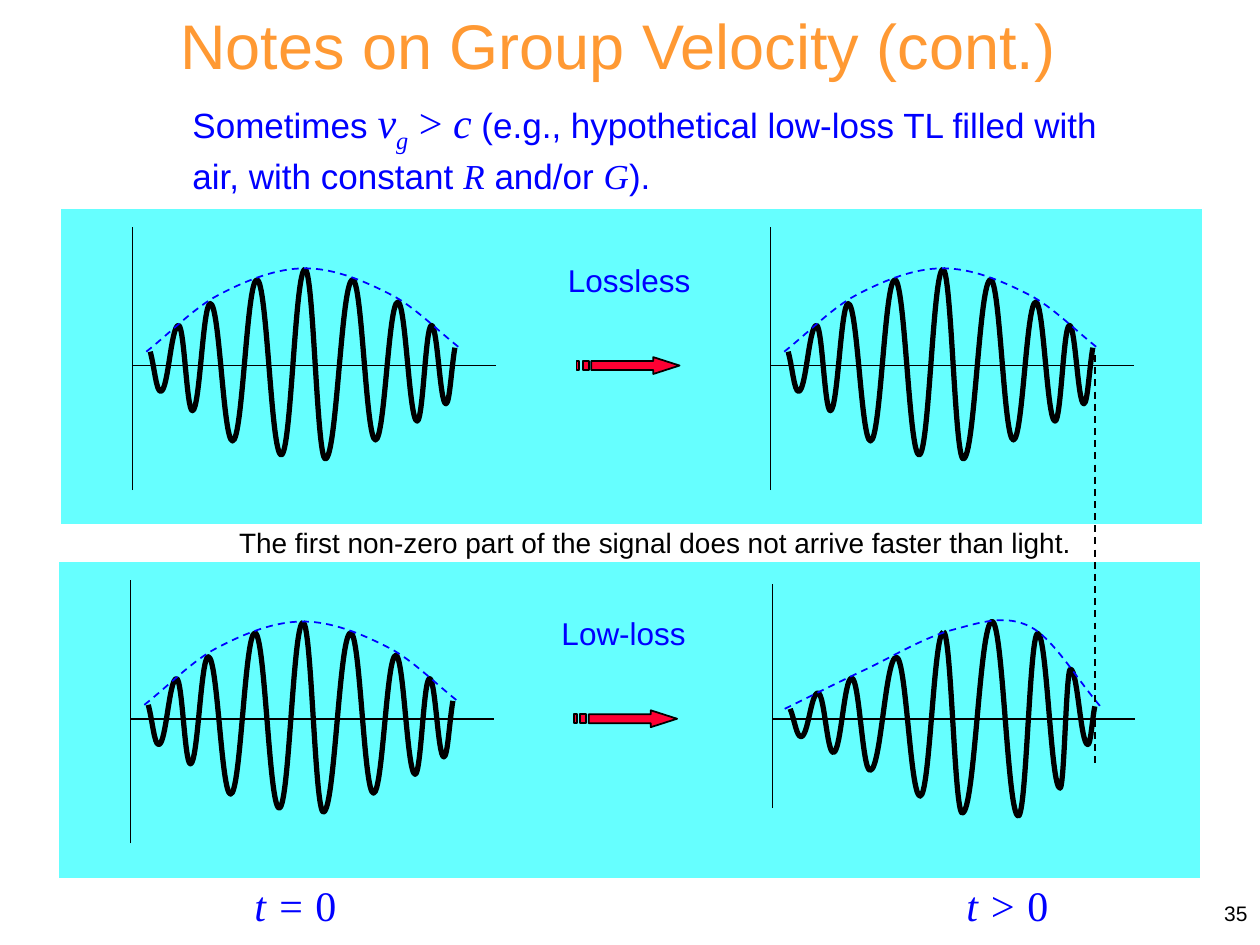
"""Build the slide comparing lossless and low-loss pulse propagation."""
import pptx
import pptx.dml.color
import pptx.enum.dml
import pptx.enum.shapes
import pptx.enum.text
import pptx.oxml.ns
import pptx.util
import lxml.etree

Cm = pptx.util.Cm
COLORS = {"title": "FF9933", "blue": "0000FF", "panel": "66FFFF",
          "white": "FFFFFF", "black": "000000", "arrow": "FF0033"}
SANS, SERIF = "Arial", "Times New Roman"
MATH = {"font": SERIF, "italic": True}

TITLE = "Notes on Group Velocity (cont.)"
STATEMENT = [
    ("Sometimes ", {}), ("v", {"size": 24, **MATH}), ("g", {"size": 24, "baseline": -25000, **MATH}),
    (" > ", {"size": 24, "font": SERIF}), ("c", {"size": 24, **MATH}),
    (" (e.g., hypothetical low-loss TL filled with air, with constant ", {}),
    ("R", MATH), (" and/or ", {}), ("G", MATH), (").", {}),
]
REMARK = "The first non-zero part of the signal does not arrive faster than light."
TIMES = [("t = ", 4.88), ("t > ", 19.23)]

EVEN_PULSE = {
    "axis_top": -2.79, "axis_bottom": 2.51,
    "turning_points": [
        (0.36, -0.28), (0.57, 0.52), (0.93, -0.81), (1.21, 0.91), (1.57, -1.25), (2.02, 1.52),
        (2.51, -1.73), (3, 1.8), (3.48, -1.94), (3.89, 1.88), (4.44, -1.73), (4.9, 1.5),
        (5.35, -1.28), (5.74, 1.12), (6.03, -0.81), (6.32, 0.77), (6.5, -0.36)],
    "envelope": [(0.28, -0.28), (1.73, -1.42), (3.48, -1.96), (5.23, -1.42), (6.63, -0.33)],
}
SKEWED_PULSE = {
    "axis_top": -2.72, "axis_bottom": 1.8,
    "turning_points": [
        (0.36, -0.2), (0.58, 0.36), (0.92, -0.52), (1.23, 0.68), (1.6, -0.82), (1.97, 1.04),
        (2.5, -1.24), (2.98, 1.56), (3.45, -1.75), (3.83, 1.9), (4.43, -1.96), (4.96, 1.96),
        (5.35, -1.72), (5.8, 1.4), (6.01, -1), (6.36, 0.52), (6.5, -0.25)],
    "envelope": [(0.25, -0.2), (1.83, -0.97), (3.66, -1.8), (5.21, -1.85), (6.63, -0.23)],
}
PANELS = [
    {"left": 1.22, "top": 4.19, "label": "Lossless", "label_left": 9.98,
     "pulses": [(1.45, EVEN_PULSE), (14.31, EVEN_PULSE)]},
    {"left": 1.17, "top": 11.31, "label": "Low-loss", "label_left": 9.9,
     "pulses": [(1.46, EVEN_PULSE), (14.4, SKEWED_PULSE)]},
]
PANEL_WIDTH, PANEL_HEIGHT = 23.04, 6.4
AXIS_DROP, AXIS_LENGTH = 3.18, 7.32
LABEL_DROP, ARROW_LEFT = 0.95, 10.4
ARROW_BARS = [(0, 0.06), (0.13, 0.25)]
SHAFT_START, HEAD_START, ARROW_TIP = 0.3, 1.55, 2.08
SHAFT_HALF, HEAD_HALF = 0.09, 0.17
WAVE_REACH, ENVELOPE_REACH = 0.42, 0.33


def rgb(name):
    return pptx.dml.color.RGBColor.from_string(COLORS[name])


def add_text(slide, runs, box, size=20, font=SANS, color="black", align="LEFT", anchor="TOP", wrap=True):
    frame = slide.shapes.add_textbox(*map(Cm, box)).text_frame
    frame.word_wrap = wrap
    frame.vertical_anchor = pptx.enum.text.MSO_ANCHOR[anchor]
    paragraph = frame.paragraphs[0]
    paragraph.alignment = pptx.enum.text.PP_ALIGN[align]
    for text, style in [(runs, {})] if isinstance(runs, str) else runs:
        run = paragraph.add_run()
        run.text = text
        run.font.size = pptx.util.Pt(style.get("size", size))
        run.font.name = style.get("font", font)
        run.font.italic = style.get("italic", False)
        run.font.color.rgb = rgb(color)
        if "baseline" in style:
            run._r.get_or_add_rPr().set("baseline", str(style["baseline"]))


def set_line(shape, color="black", width=1, dashed=False):
    shape.line.color.rgb = rgb(color)
    shape.line.width = pptx.util.Pt(width)
    if dashed:
        shape.line.dash_style = pptx.enum.dml.MSO_LINE.DASH


def set_fill(shape, color):
    shape.shadow.inherit = False
    shape.fill.solid()
    shape.fill.fore_color.rgb = rgb(color)


def add_line(slide, start, end, dashed=False):
    connector = slide.shapes.add_connector(
        pptx.enum.shapes.MSO_CONNECTOR.STRAIGHT, *map(Cm, (*start, *end)))
    lxml.etree.SubElement(connector._element.spPr, pptx.oxml.ns.qn("a:effectLst"))
    set_line(connector, dashed=dashed)


def shift(points, origin):
    return [(Cm(origin[0] + x), Cm(origin[1] + y)) for x, y in points]


def chord_slope(start, end):
    return (end[1] - start[1]) / (end[0] - start[0])


def bezier_points(knots, reach, flat_turns=False):
    last = len(knots) - 1
    slopes = [0 if flat_turns and 0 < index < last
              else chord_slope(knots[max(index - 1, 0)], knots[min(index + 1, last)])
              for index in range(last + 1)]
    points = [knots[0]]
    for index in range(last):
        (x1, y1), (x2, y2) = knots[index:index + 2]
        step = reach * (x2 - x1)
        points += [(x1 + step, y1 + step * slopes[index]),
                   (x2 - step, y2 - step * slopes[index + 1]), (x2, y2)]
    return points


def add_curve(slide, points, origin, **line):
    start, *controls = shift(points, origin)
    builder = slide.shapes.build_freeform(*start)
    builder.add_line_segments(controls, close=False)
    shape = builder.convert_to_shape()
    segments = list(shape._element.iter(pptx.oxml.ns.qn("a:lnTo")))
    outline = segments[0].getparent()
    for index in range(0, len(segments), 3):
        curve = lxml.etree.SubElement(outline, pptx.oxml.ns.qn("a:cubicBezTo"))
        for segment in segments[index:index + 3]:
            curve.append(segment[0])
            outline.remove(segment)
    shape.shadow.inherit = False
    shape.fill.background()
    set_line(shape, **line)


def add_arrow(slide, origin):
    upper_edge = [(SHAFT_START, -SHAFT_HALF), (HEAD_START, -SHAFT_HALF), (HEAD_START, -HEAD_HALF)]
    lower_edge = [(x, -y) for x, y in reversed(upper_edge)]
    contours = [[*upper_edge, (ARROW_TIP, 0), *lower_edge]]
    for left, right in ARROW_BARS:
        contours.append([(left, -SHAFT_HALF), (right, -SHAFT_HALF), (right, SHAFT_HALF), (left, SHAFT_HALF)])
    contours = [shift(contour, origin) for contour in contours]
    builder = slide.shapes.build_freeform(*contours[0][0])
    for contour in contours:
        if contour is not contours[0]:
            builder.move_to(*contour[0])
        builder.add_line_segments(contour[1:])
    shape = builder.convert_to_shape()
    set_fill(shape, "arrow")
    set_line(shape)


def add_pulse(slide, origin, pulse):
    x, y = origin
    add_line(slide, (x, y + pulse["axis_bottom"]), (x, y + pulse["axis_top"]))
    add_line(slide, (x, y), (x + AXIS_LENGTH, y))
    wave = bezier_points(pulse["turning_points"], WAVE_REACH, flat_turns=True)
    middle = len(wave) // 2
    for half in (wave[middle:], wave[:middle + 1]):
        add_curve(slide, half, origin, width=3)
    envelope = bezier_points(pulse["envelope"], ENVELOPE_REACH)
    add_curve(slide, envelope, origin, color="blue", dashed=True)


def add_panel(slide, panel):
    left, top = panel["left"], panel["top"]
    shape = slide.shapes.add_shape(
        pptx.enum.shapes.MSO_SHAPE.RECTANGLE, *map(Cm, (left, top, PANEL_WIDTH, PANEL_HEIGHT)))
    set_fill(shape, "panel")
    set_line(shape, color="white")
    for offset, pulse in panel["pulses"]:
        add_pulse(slide, (left + offset, top + AXIS_DROP), pulse)
    add_text(slide, panel["label"], (left + panel["label_left"], top + LABEL_DROP, 3.02, 1.02),
             size=18, color="blue", wrap=False)
    add_arrow(slide, (left + ARROW_LEFT, top + AXIS_DROP))


def main():
    presentation = pptx.Presentation()
    presentation.slide_width, presentation.slide_height = Cm(25.4), Cm(19.05)
    slide = presentation.slides.add_slide(presentation.slide_layouts[6])
    add_text(slide, TITLE, (0.46, 0, 24, 1.78), size=36, color="title", align="CENTER")
    add_text(slide, STATEMENT, (3.63, 1.83, 19.15, 2.13), color="blue")
    for relation, left in TIMES:
        add_text(slide, [(relation, MATH), ("0", {})], (left, 17.6, 3, 1.27),
                 size=24, font=SERIF, color="blue")
    for panel in PANELS:
        add_panel(slide, panel)
    add_line(slide, (22.07, 7.16), (22.07, 15.39), dashed=True)
    add_text(slide, REMARK, (4.57, 10.46, 18.26, 0.94), size=16)
    add_text(slide, "35", (20.12, 17.78, 5.28, 1.27), size=12, align="RIGHT", anchor="MIDDLE")
    presentation.save("out.pptx")


if __name__ == "__main__":
    main()
